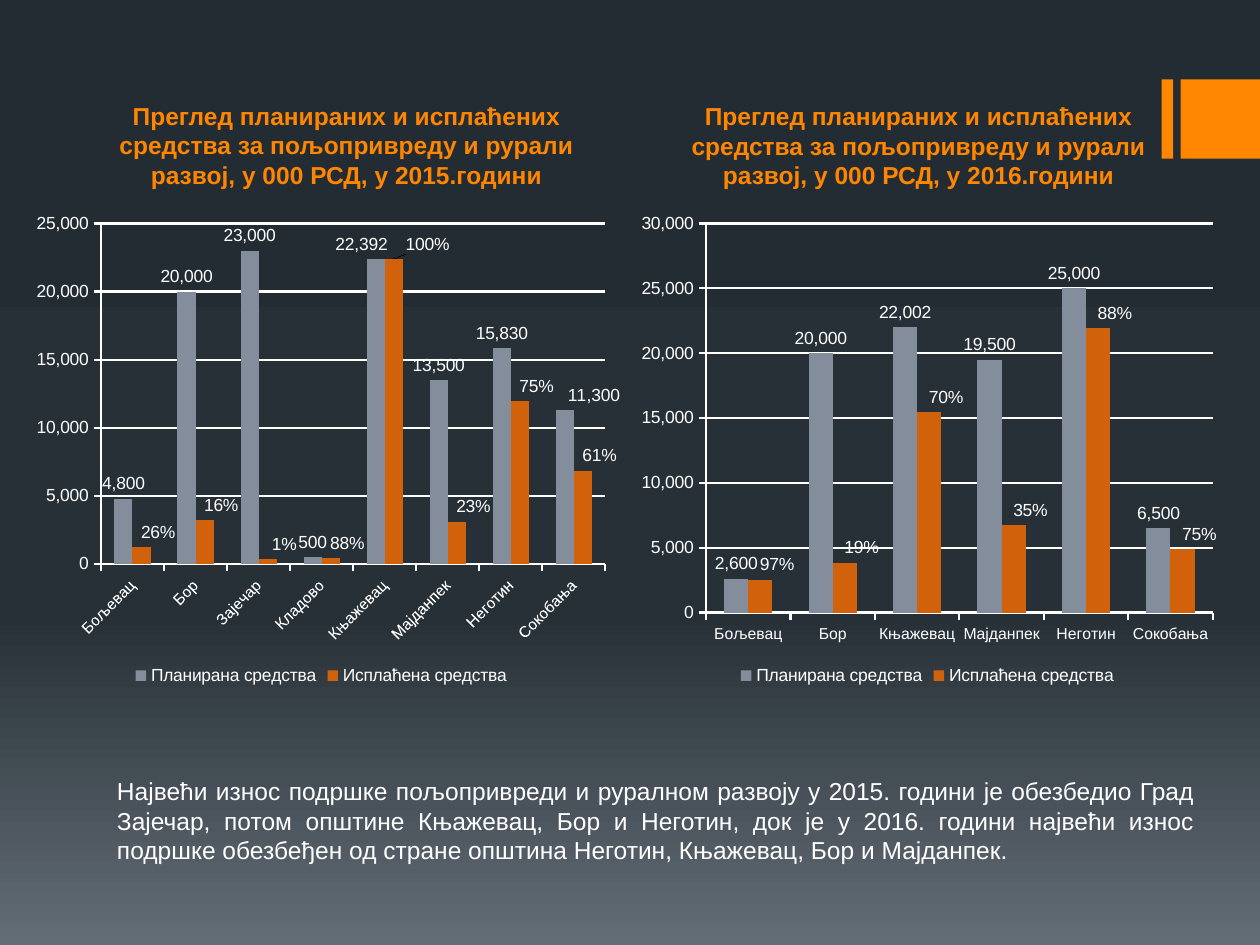
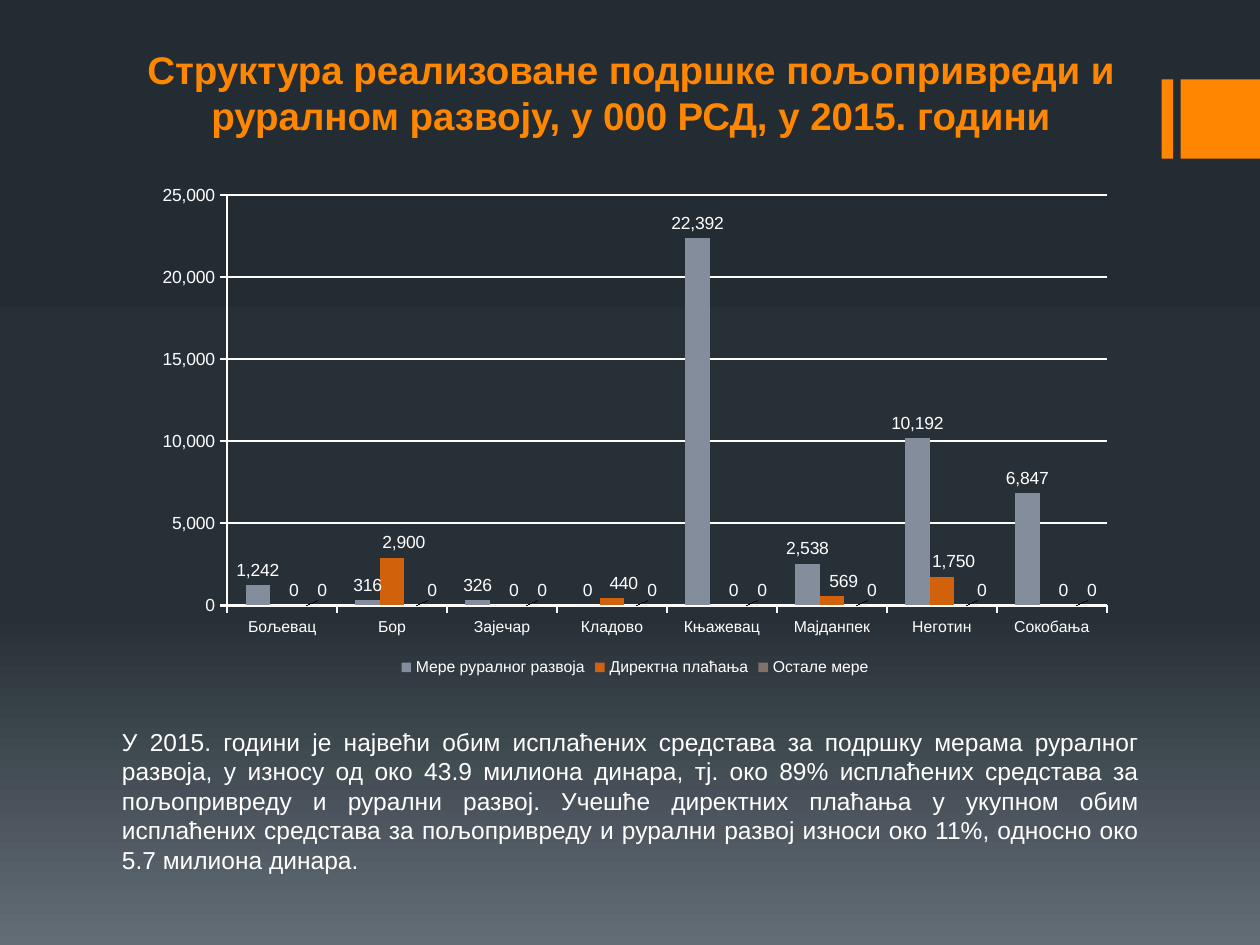
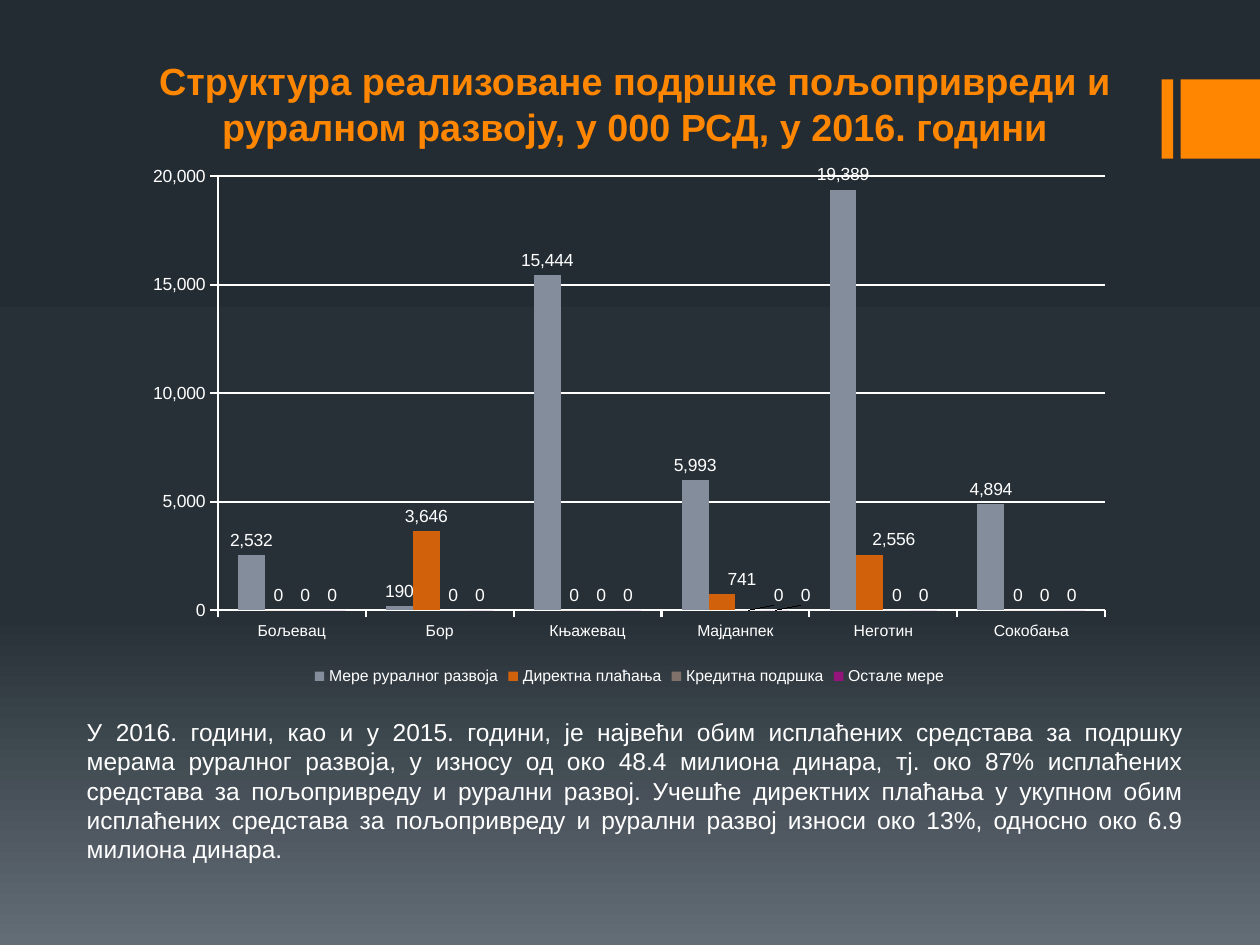
from copy import deepcopy
from dataclasses import dataclass, field

from pptx import Presentation
from pptx.chart.chart import Chart
from pptx.chart.data import CategoryChartData
from pptx.dml.color import RGBColor
from pptx.enum.chart import XL_CHART_TYPE as ChartType
from pptx.enum.chart import XL_LABEL_POSITION as LabelPos
from pptx.enum.chart import XL_LEGEND_POSITION as LegendPos
from pptx.enum.chart import XL_TICK_MARK as Tick
from pptx.enum.shapes import MSO_SHAPE as Preset
from pptx.enum.text import MSO_ANCHOR as Anchor
from pptx.enum.text import MSO_AUTO_SIZE as AutoSize
from pptx.enum.text import PP_ALIGN as Align
from pptx.oxml import parse_xml
from pptx.oxml.ns import nsdecls
from pptx.slide import Slide
from pptx.text.text import TextFrame
from pptx.util import Inches, Pt


@dataclass(frozen=True)
class Theme:
    font: str = "Arial"
    accent: str = "FF8600"
    text: str = "FFFFFF"
    series: tuple[str, ...] = ("838D9B", "D2610C", "80716A", "94147C")
    backdrop: tuple[str, ...] = ("242C33", "273037", "636D76")
    middle_stop: float = 0.65
    heading: float = 22
    body: float = 14
    label: float = 10
    small: float = 9
    line: float = 1.25
    number: str = "#,##0"


THEME = Theme()
WIDTH, HEIGHT = Inches(10), Inches(7.5)
STEP = 5000


@dataclass(frozen=True)
class Box:
    x: float
    y: float
    w: float
    h: float

    def emu(self) -> tuple[int, ...]:
        return tuple(int(share * side / 100) for share, side in zip(
            (self.x, self.y, self.w, self.h), (WIDTH, HEIGHT) * 2))


@dataclass(frozen=True)
class Series:
    name: str
    values: tuple[int, ...]
    texts: tuple[str, ...] = ()
    shift: float = 0
    nudges: dict[int, float] = field(default_factory=dict)


@dataclass(frozen=True)
class ColumnChart:
    box: Box
    cats: tuple[str, ...]
    series: tuple[Series, ...]
    plot_left: float = 0.085
    plot_height: float = 0.81
    legend_size: float = THEME.small
    tilt: int = 0


@dataclass(frozen=True)
class Note:
    box: Box
    text: str
    color: str = THEME.text
    bold: bool = False
    align: Align = Align.JUSTIFY
    anchor: Anchor = Anchor.TOP
    fit: AutoSize = AutoSize.SHAPE_TO_FIT_TEXT


@dataclass(frozen=True)
class Page:
    title: str
    title_box: Box
    title_size: float
    charts: tuple[ColumnChart, ...]
    notes: tuple[Note, ...]


BANDS = (Box(92.2, 8.4, 0.9, 8.4), Box(93.7, 8.4, 6.3, 8.4))
CATS_2015 = ("Бољевац", "Бор", "Зајечар", "Кладово", "Књажевац", "Мајданпек", "Неготин", "Сокобања")
CATS_2016 = tuple(c for c in CATS_2015 if c not in ("Зајечар", "Кладово"))
RURAL, DIRECT, CREDIT, OTHER = (
    "Мере руралног развоја", "Директна плаћања", "Кредитна подршка", "Остале мере")
RURAL_2015 = (1242, 316, 326, 0, 22392, 2538, 10192, 6847)
DIRECT_2015 = (0, 2900, 0, 440, 0, 569, 1750, 0)
PAID_2015 = tuple(map(sum, zip(RURAL_2015, DIRECT_2015)))
PLANNED_2015 = (4800, 20000, 23000, 500, 22392, 13500, 15830, 11300)
PLANNED_2016 = (2600, 20000, 22002, 19500, 25000, 6500)
PAID_2016 = (2532, 3836, 15444, 6734, 21954, 4894)


def budget_chart(x: float, cats: tuple[str, ...], planned: Series, paid: tuple[int, ...],
                 plot_height: float, nudges: dict[int, float], tilt: int = 0) -> ColumnChart:
    shares = tuple(f"{part / whole:.0%}" for part, whole in zip(paid, planned.values))
    spent = Series("Исплаћена средства", paid, shares, 2.8, nudges)
    return ColumnChart(Box(x, 21.6, 47.2, 51.47), cats, (planned, spent),
                       0.128, plot_height, THEME.label, tilt)


def structure_title(year: int) -> str:
    return ("Структура реализоване подршке пољопривреди и руралном развоју, "
            f"у 000 РСД, у {year}. години")


PLANNED = "Планирана средства"
PAGES = (
    Page(
        "Преглед планираних и исплаћених средства за пољопривреду и рурали развој, у 000 РСД, у 2015.години",
        Box(5, 5.87, 45, 14.8), THEME.body,
        (
            budget_chart(2, CATS_2015, Series(PLANNED, PLANNED_2015, nudges={4: -2.4, 7: 4.9}),
                         PAID_2015, 0.7, {4: 5.7}, -45),
            budget_chart(50, CATS_2016, Series(PLANNED, PLANNED_2016), PAID_2016, 0.8, {}),
        ),
        (
            Note(Box(50, 10.13, 45.8, 10.53),
                 "Преглед планираних и исплаћених\nсредства за пољопривреду и рурали\n"
                 "развој, у 000 РСД, у 2016.години",
                 THEME.accent, True, Align.CENTER, Anchor.MIDDLE, AutoSize.NONE),
            Note(Box(8.3, 81.47, 87.5, 10.8),
                 "Највећи износ подршке пољопривреди и руралном развоју у 2015. години је "
                 "обезбедио Град Зајечар, потом општине Књажевац, Бор и Неготин, док је у 2016. "
                 "години највећи износ подршке обезбеђен од стране општина Неготин, Књажевац, "
                 "Бор и Мајданпек."),
        ),
    ),
    Page(
        structure_title(2015), Box(10.1, -1.47, 80, 16.8), THEME.heading,
        (
            ColumnChart(Box(11.4, 18.53, 78, 53.6), CATS_2015, (
                Series(RURAL, RURAL_2015),
                Series(DIRECT, DIRECT_2015, shift=1.2),
                Series(OTHER, (0,) * len(CATS_2015), shift=1.6),
            )),
        ),
        (
            Note(Box(8.7, 76.27, 82.7, 17.07),
                 "У 2015. години је највећи обим исплаћених средстава за подршку мерама руралног "
                 "развоја, у износу од око 43.9 милиона динара, тј. око 89% исплаћених средстава за "
                 "пољопривреду и рурални развој. Учешће директних плаћања у укупном обим исплаћених "
                 "средстава за пољопривреду и рурални развој износи око 11%, односно око 5.7 милиона "
                 "динара."),
        ),
    ),
    Page(
        structure_title(2016), Box(10.4, 2.8, 80, 13.6), 21.6,
        (
            ColumnChart(Box(10.6, 16.4, 78.7, 56.67), CATS_2016, (
                Series(RURAL, (2532, 190, 15444, 5993, 19389, 4894)),
                Series(DIRECT, (0, 3646, 0, 741, 2556, 0), nudges={3: 2, 4: 2.4}),
                Series(CREDIT, (0,) * len(CATS_2016), nudges={3: 3}),
                Series(OTHER, (0,) * len(CATS_2016), nudges={3: 3}),
            )),
        ),
        (
            Note(Box(5.9, 75.2, 89, 17.07),
                 "У 2016. години, као и у 2015. години, је највећи обим исплаћених средстава за "
                 "подршку мерама руралног развоја, у износу од око 48.4 милиона динара, тј. око 87% "
                 "исплаћених средстава за пољопривреду и рурални развој. Учешће директних плаћања у "
                 "укупном обим исплаћених средстава за пољопривреду и рурални развој износи око 13%, "
                 "односно око 6.9 милиона динара."),
        ),
    ),
)


def rgb(color: str) -> RGBColor:
    return RGBColor.from_string(color)


def style_font(font, size: float, color: str = THEME.text, bold: bool = False) -> None:
    font.name, font.size, font.bold = THEME.font, Pt(size), bold
    font.color.rgb = rgb(color)


def style_text(tf: TextFrame, size: float, color: str, bold: bool, align: Align) -> None:
    for p in tf.paragraphs:
        p.alignment = align
        for r in p.runs:
            style_font(r.font, size, color, bold)


def style_master(prs, s: Slide) -> None:
    master = prs.slide_master
    fill = master.background.fill
    fill.gradient()
    fill.gradient_angle = 270
    stops = master.element.xpath("p:cSld/p:bg//a:gsLst")[0]
    stops.insert(1, deepcopy(stops[0]))
    for stop, share, color in zip(fill.gradient_stops, (0, THEME.middle_stop, 1), THEME.backdrop):
        stop.position = share
        stop.color.rgb = rgb(color)
    for i, box in enumerate(BANDS, start=20):
        sp = s.shapes.add_shape(Preset.RECTANGLE, *box.emu())
        sp.shadow.inherit = False
        sp.fill.solid()
        sp.fill.fore_color.rgb = rgb(THEME.accent)
        sp.line.fill.background()
        sp.element.xpath(".//p:cNvPr")[0].set("id", str(i))
        master.shapes.element.append(sp.element)


def add_title(s: Slide, page: Page) -> None:
    sp = s.shapes.title
    sp.left, sp.top, sp.width, sp.height = page.title_box.emu()
    tf = sp.text_frame
    tf.text = page.title
    tf.auto_size, tf.word_wrap = AutoSize.NONE, True
    tf.vertical_anchor = Anchor.BOTTOM
    style_text(tf, page.title_size, THEME.accent, True, Align.CENTER)


def add_note(s: Slide, note: Note) -> None:
    tf = s.shapes.add_textbox(*note.box.emu()).text_frame
    tf.text = note.text
    tf.word_wrap, tf.auto_size = True, note.fit
    tf.vertical_anchor = note.anchor
    style_text(tf, THEME.body, note.color, note.bold, note.align)


def manual_layout(**values: float | str):
    parts = "".join(f'<c:{k} val="{v}"/>' for k, v in values.items())
    return parse_xml(f'<c:layout {nsdecls("c")}><c:manualLayout>{parts}</c:manualLayout></c:layout>')


def place_plot(chart: Chart, data: ColumnChart) -> None:
    area = chart.element.xpath("c:chart/c:plotArea")[0]
    for old in area.xpath("c:layout"):
        area.remove(old)
    area.insert(0, manual_layout(
        layoutTarget="inner", xMode="edge", yMode="edge",
        x=data.plot_left, y=0.04, w=round(0.98 - data.plot_left, 3), h=data.plot_height))


def style_axes(chart: Chart, data: ColumnChart) -> None:
    cat, val = chart.category_axis, chart.value_axis
    for axis, size in ((cat, THEME.small), (val, THEME.label)):
        axis.major_tick_mark, axis.minor_tick_mark = Tick.OUTSIDE, Tick.NONE
        style_font(axis.tick_labels.font, size)
    peak = max(max(row.values) for row in data.series)
    val.minimum_scale, val.major_unit = 0, STEP
    val.maximum_scale = (peak // STEP + 1) * STEP
    val.has_major_gridlines = True
    val.tick_labels.number_format = THEME.number
    val.tick_labels.number_format_is_linked = False
    for line in (cat.format.line, val.format.line, val.major_gridlines.format.line):
        line.color.rgb = rgb(THEME.text)
        line.width = Pt(THEME.line)
    if data.tilt:
        body = chart.element.xpath(".//c:catAx/c:txPr/a:bodyPr")[0]
        body.set("rot", str(data.tilt * 60000))


def style_series(series, data: Series, color: str) -> None:
    series.format.fill.solid()
    series.format.fill.fore_color.rgb = rgb(color)
    series.invert_if_negative = False
    labels = series.data_labels
    labels.show_value = True
    labels.number_format, labels.number_format_is_linked = THEME.number, False
    labels.position = LabelPos.OUTSIDE_END
    style_font(labels.font, THEME.label)
    for i in range(len(data.values)):
        dx = data.nudges.get(i, data.shift)
        if not dx:
            continue
        dl = series.points[i].data_label
        if data.texts:
            dl.text_frame.text = data.texts[i]
            style_text(dl.text_frame, THEME.label, THEME.text, False, Align.CENTER)
        else:
            style_font(dl.font, THEME.label)
        dl.position = LabelPos.OUTSIDE_END
        node = series.data_labels._element.xpath(f'c:dLbl[c:idx/@val="{i}"]')[0]
        node.insert(1, manual_layout(x=round(dx / 100, 3), y=0))


def add_columns(s: Slide, data: ColumnChart) -> None:
    cd = CategoryChartData(number_format=THEME.number)
    cd.categories = data.cats
    for row in data.series:
        cd.add_series(row.name, row.values)
    chart = s.shapes.add_chart(ChartType.COLUMN_CLUSTERED, *data.box.emu(), cd).chart
    style_font(chart.font, THEME.label)
    chart.has_title = False
    chart.has_legend = True
    chart.legend.position = LegendPos.BOTTOM
    chart.legend.include_in_layout = False
    style_font(chart.legend.font, data.legend_size)
    plot = chart.plots[0]
    plot.gap_width, plot.overlap, plot.vary_by_categories = 150, 0, False
    place_plot(chart, data)
    style_axes(chart, data)
    for series, row, color in zip(plot.series, data.series, THEME.series):
        style_series(series, row, color)


def main() -> None:
    prs = Presentation()
    prs.slide_width, prs.slide_height = WIDTH, HEIGHT
    for page in PAGES:
        s = prs.slides.add_slide(prs.slide_layouts[5])
        add_title(s, page)
        for data in page.charts:
            add_columns(s, data)
        for note in page.notes:
            add_note(s, note)
    style_master(prs, prs.slides[0])
    prs.save("out.pptx")


if __name__ == "__main__":
    main()
